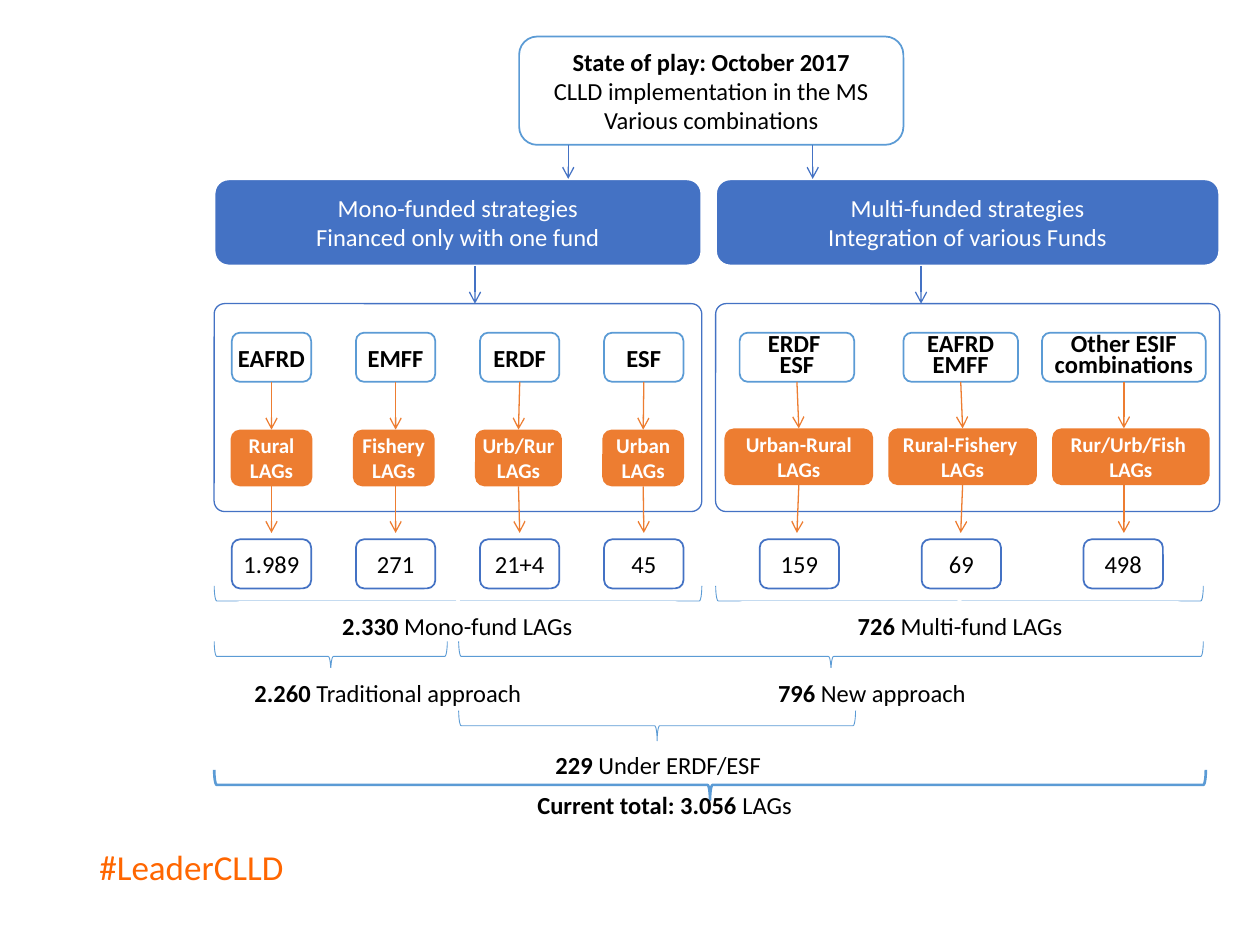
from dataclasses import dataclass

from lxml import etree
from pptx import Presentation
from pptx.dml.color import RGBColor
from pptx.enum import shapes, text
from pptx.oxml import ns
from pptx.util import Inches, Pt

BLACK = RGBColor(0x00, 0x00, 0x00)
WHITE = RGBColor(0xFF, 0xFF, 0xFF)
BLUE = RGBColor(0x44, 0x72, 0xC4)
LIGHT_BLUE = RGBColor(0x5B, 0x9B, 0xD5)
ORANGE = RGBColor(0xED, 0x7D, 0x31)
HASHTAG_ORANGE = RGBColor(0xFF, 0x66, 0x00)
FONT = "Calibri"
BOX_HEIGHT = 0.39
LAG_HEIGHT = 0.45
COUNT_WIDTH = 0.63
BRACE_DEPTH = 0.24


@dataclass
class Box:
    left: float
    top: float
    width: float
    height: float
    fill: RGBColor | None = None
    line: RGBColor | None = None
    line_width: float = 1
    corner: float | None = None


@dataclass
class Column:
    fund: str
    fund_left: float
    fund_width: float
    lag: str
    lag_left: float
    lag_width: float
    count: str
    count_left: float
    lag_top: float = 3.41
    side_inset: float = 0.02
    fund_spacing: float | None = None

    @property
    def axis(self) -> float:
        return self.fund_left + self.fund_width / 2

    @property
    def lag_centred(self) -> bool:
        return abs(self.lag_left + self.lag_width / 2 - self.axis) < 0.015


@dataclass
class Brace:
    left: float
    top: float
    length: float
    line_width: float = 0.5


@dataclass
class Total:
    number: str
    label: str
    left: float
    top: float
    width: float
    fill: RGBColor | None = WHITE


MONO_COLUMNS = [
    Column(fund, 1.84 + 0.985 * i, COUNT_WIDTH, lag, lag_left, lag_width,
           count, 1.84 + 0.985 * i, side_inset=inset)
    for i, (fund, lag, lag_left, lag_width, count, inset) in enumerate([
        ("EAFRD", "Rural LAGs", 1.83, 0.65, "1.989", 0.02),
        ("EMFF", "Fishery\vLAGs", 2.8, 0.65, "271", 0.02),
        ("ERDF", "Urb/Rur LAGs", 3.77, 0.69, "21+4", 0),
        ("ESF", "Urban LAGs", 4.78, 0.65, "45", 0),
    ])
]
MULTI_COLUMNS = [
    Column(fund, fund_left, fund_width, lag, 5.75 + 1.3 * i, lag_width,
           count, 6.03 + 1.285 * i, 3.4, inset, fund_spacing=12)
    for i, (fund, fund_left, fund_width, lag, lag_width, count, inset) in enumerate([
        ("ERDF \nESF", 5.87, 0.91, "Urban-Rural\nLAGs", 1.18, "159", 0.02),
        ("EAFRD EMFF", 7.17, 0.91, "Rural-Fishery \nLAGs", 1.18, "69", 0.02),
        ("Other ESIF combinations", 8.27, 1.3, "Rur/Urb/Fish \nLAGs", 1.25, "498", 0),
    ])
]
BRACES = [
    Brace(1.7, 4.65, 3.87), Brace(5.68, 4.65, 3.87),
    Brace(1.7, 5.09, 1.85), Brace(3.64, 5.09, 5.91),
    Brace(3.64, 5.64, 3.15), Brace(1.7, 6.11, 7.87, 1.5),
]
TOTALS = [
    Total("2.330 ", "Mono-fund LAGs", 1.84, 4.77, 3.58),
    Total("726 ", "Multi-fund LAGs", 5.83, 4.77, 3.58),
    Total("2.260 ", "Traditional approach", 1.73, 5.3, 2.7),
    Total("796 ", "New approach", 5.56, 5.3, 2.72),
    Total("229 ", "Under ERDF/ESF", 3.61, 5.87, 3.23, None),
    Total("Current total: 3.056 ", "LAGs", 3.66, 6.19, 3.23, None),
]


def set_line(shape, color: RGBColor | None, width: float) -> None:
    if color is None:
        shape.line.fill.background()
    else:
        shape.line.color.rgb = color
        shape.line.width = Pt(width)


def add_box(slide, box: Box):
    shape = slide.shapes.add_shape(
        shapes.MSO_SHAPE.ROUNDED_RECTANGLE, Inches(box.left), Inches(box.top),
        Inches(box.width), Inches(box.height))
    shape.shadow.inherit = False
    if box.fill is None:
        shape.fill.background()
    else:
        shape.fill.solid()
        shape.fill.fore_color.rgb = box.fill
    set_line(shape, box.line, box.line_width)
    if box.corner is not None:
        shape.adjustments[0] = box.corner
    return shape


def set_insets(frame, side: float) -> None:
    frame.margin_left = frame.margin_right = Inches(side)
    frame.margin_top = frame.margin_bottom = Inches(0.04)


def style_paragraph(paragraph, color: RGBColor, size: float, bold: bool = False) -> None:
    paragraph.alignment = text.PP_ALIGN.CENTER
    font = paragraph.font
    font.name, font.size, font.bold = FONT, Pt(size), bold
    font.color.rgb = color


def write(shape, content: str, color: RGBColor = BLACK, size: float = 14,
          bold: bool = False, spacing: float | None = None) -> None:
    frame = shape.text_frame
    frame.word_wrap = True
    frame.vertical_anchor = text.MSO_ANCHOR.MIDDLE
    frame.text = content
    for paragraph in frame.paragraphs:
        style_paragraph(paragraph, color, size, bold)
        if spacing:
            paragraph.line_spacing = Pt(spacing)


def add_arrow(slide, x: float, top: float, bottom: float, color: RGBColor,
              source=None, target=None) -> None:
    """Draw a downward arrow, joined to the boxes given."""
    connector = slide.shapes.add_connector(
        shapes.MSO_CONNECTOR.STRAIGHT, Inches(x), Inches(top), Inches(x), Inches(bottom))
    set_line(connector, color, 0.75)
    line = connector.line._get_or_add_ln()
    etree.SubElement(line, ns.qn("a:tailEnd"), type="arrow")
    etree.SubElement(connector._element.spPr, ns.qn("a:effectLst"))
    if source is not None:
        connector.begin_connect(source, 2)
    if target is not None:
        connector.end_connect(target, 0)


def add_column(slide, column: Column) -> None:
    fund = add_box(slide, Box(column.fund_left, 2.64, column.fund_width, BOX_HEIGHT,
                              WHITE, LIGHT_BLUE))
    lag = add_box(slide, Box(column.lag_left, column.lag_top, column.lag_width,
                             LAG_HEIGHT, ORANGE))
    count = add_box(slide, Box(column.count_left, 4.28, COUNT_WIDTH, BOX_HEIGHT, WHITE, BLUE))
    for shape, inset in ((fund, 0.02), (lag, column.side_inset), (count, 0.02)):
        set_insets(shape.text_frame, inset)
    write(fund, column.fund, bold=True, spacing=column.fund_spacing)
    write(lag, column.lag, WHITE, 12, bold=True)
    write(count, column.count)
    joined_lag = lag if column.lag_centred else None
    add_arrow(slide, column.axis, 3.03, column.lag_top, ORANGE, fund, joined_lag)
    add_arrow(slide, column.axis, column.lag_top + LAG_HEIGHT, 4.23, ORANGE, joined_lag)


def add_brace(slide, brace: Brace) -> None:
    """Draw a brace that points down, turned about its centre."""
    shift = (brace.length - BRACE_DEPTH) / 2
    shape = slide.shapes.add_shape(
        shapes.MSO_SHAPE.RIGHT_BRACE, Inches(brace.left + shift), Inches(brace.top - shift),
        Inches(BRACE_DEPTH), Inches(brace.length))
    shape.rotation = 90
    shape.shadow.inherit = False
    shape.fill.background()
    set_line(shape, LIGHT_BLUE, brace.line_width)


def add_total(slide, total: Total) -> None:
    shape = add_box(slide, Box(total.left, total.top, total.width, BOX_HEIGHT, total.fill))
    set_insets(shape.text_frame, 0.02)
    write(shape, total.number)
    paragraph = shape.text_frame.paragraphs[0]
    paragraph.runs[0].font.bold = True
    paragraph.add_run().text = total.label


def add_hashtag(slide) -> None:
    box = slide.shapes.add_textbox(Inches(0.69), Inches(6.66), Inches(1.68), Inches(0.44))
    box.text_frame.word_wrap = False
    box.text_frame.text = "#LeaderCLLD"
    style_paragraph(box.text_frame.paragraphs[0], HASHTAG_ORANGE, 20)
    box.text_frame.paragraphs[0].alignment = text.PP_ALIGN.LEFT


def main() -> None:
    presentation = Presentation()
    presentation.slide_width, presentation.slide_height = Inches(10), Inches(7.5)
    slide = presentation.slides.add_slide(presentation.slide_layouts[6])
    add_hashtag(slide)

    title = add_box(slide, Box(4.12, 0.29, 3.05, 0.86, line=LIGHT_BLUE))
    write(title, "State of play: October 2017\nCLLD implementation in the MS\nVarious combinations")
    title.text_frame.paragraphs[0].font.bold = True

    for left, width, corner, heading, title_x, panel_x in (
        (1.7, 3.87, 0.05, "Mono-funded strategies\nFinanced only with one fund", 4.51, 3.77),
        (5.68, 4, 0.05, "Multi-funded strategies\nIntegration of various Funds", 6.45, 7.31),
    ):
        strategy = add_box(slide, Box(left, 1.42, width, 0.69, BLUE, WHITE, 1.5))
        write(strategy, heading, WHITE)
        add_box(slide, Box(left, 2.41, width, 1.65, None, BLUE, 0.75, corner))
        add_arrow(slide, title_x, 1.15, 1.42, BLUE)
        add_arrow(slide, panel_x, 2.11, 2.41, BLUE)

    for column in MONO_COLUMNS + MULTI_COLUMNS:
        add_column(slide, column)
    for first in range(0, len(BRACES), 2):
        if first < 4:
            for brace in BRACES[first:first + 2]:
                add_brace(slide, brace)
            for total in TOTALS[first:first + 2]:
                add_total(slide, total)
        else:
            for brace, total in zip(BRACES[first:], TOTALS[first:]):
                add_brace(slide, brace)
                add_total(slide, total)
    presentation.save("out.pptx")


if __name__ == "__main__":
    main()
